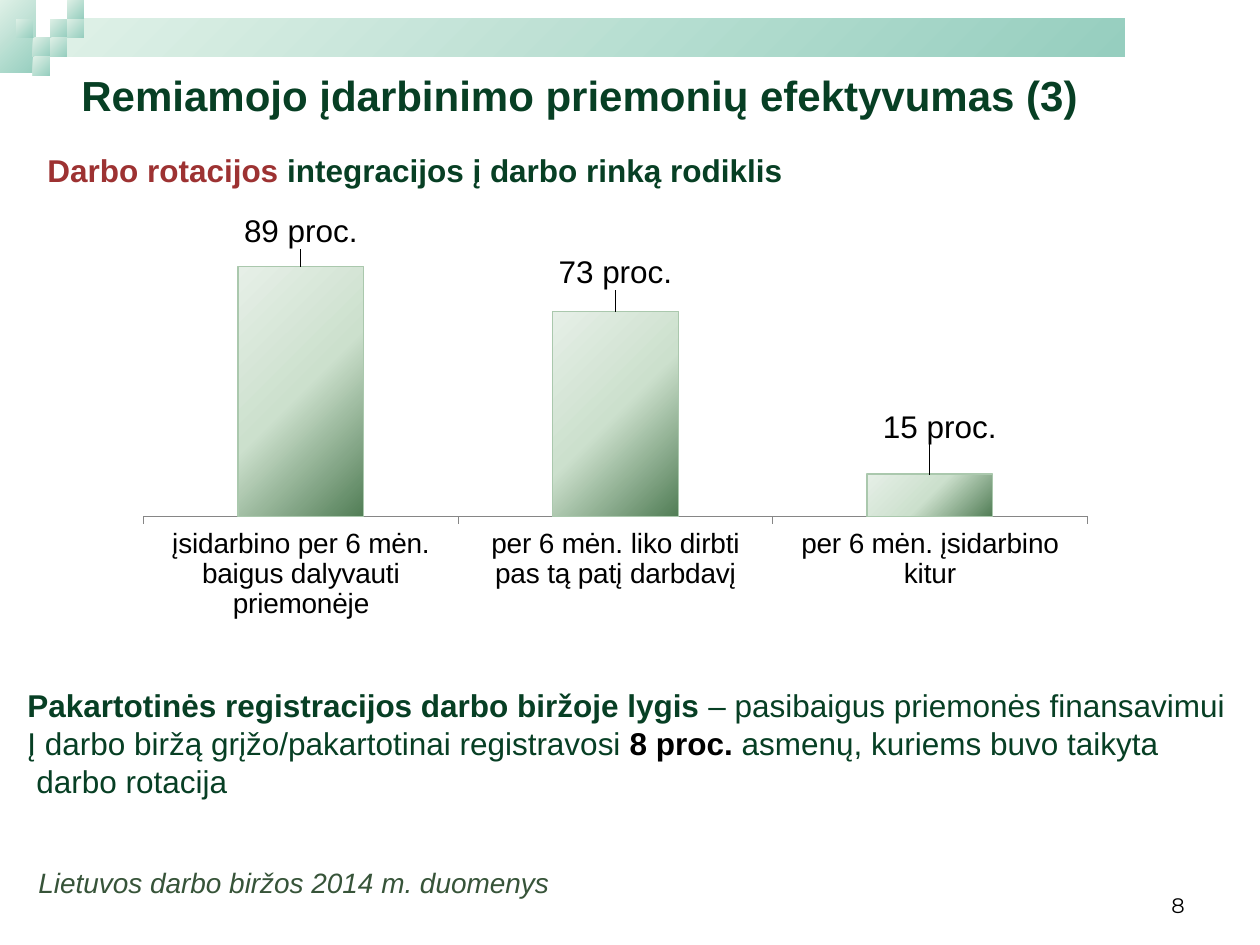
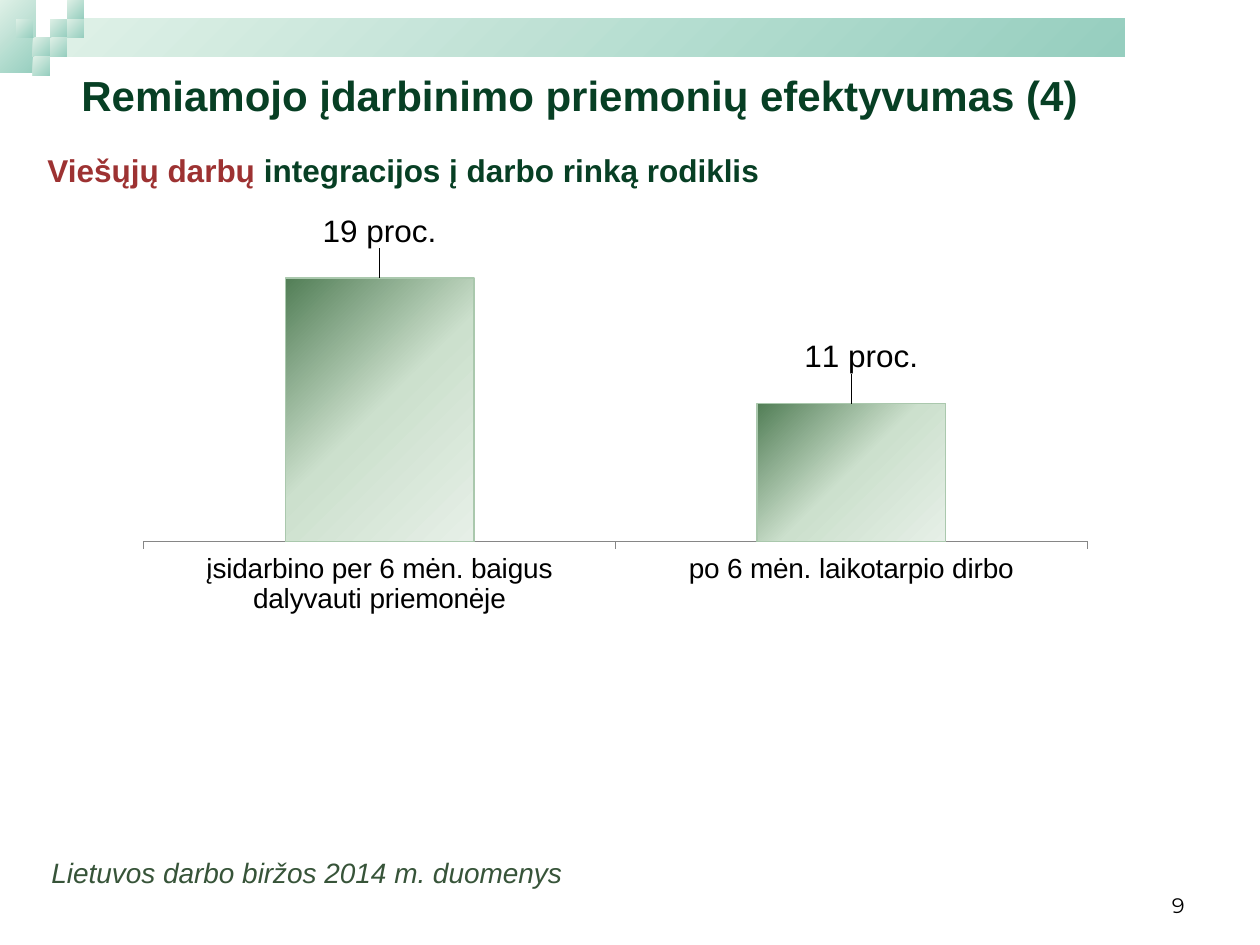
from lxml import etree
from pptx import Presentation
from pptx.chart.data import CategoryChartData
from pptx.dml.color import RGBColor
from pptx.enum.chart import XL_CHART_TYPE, XL_LABEL_POSITION, XL_TICK_MARK
from pptx.enum.shapes import MSO_SHAPE
from pptx.enum.text import MSO_ANCHOR, PP_ALIGN
from pptx.oxml.ns import qn
from pptx.util import Pt

RECTANGLE = MSO_SHAPE.RECTANGLE
COLUMNS = XL_CHART_TYPE.COLUMN_CLUSTERED
OUTSIDE_END = XL_LABEL_POSITION.OUTSIDE_END
TICK_OUTSIDE, TICK_NONE = XL_TICK_MARK.OUTSIDE, XL_TICK_MARK.NONE
TOP, MIDDLE, BOTTOM = MSO_ANCHOR.TOP, MSO_ANCHOR.MIDDLE, MSO_ANCHOR.BOTTOM
LEFT, RIGHT = PP_ALIGN.LEFT, PP_ALIGN.RIGHT

PX = 914400 / 126
COLORS = {
    "green": "073F24", "red": "9D3232", "black": "000000", "source": "375439",
    "band_light": "DFF1E7", "band_dark": "96CEBF",
    "bar_dark": "527E56", "bar_mid": "CCE0CD", "bar_light": "E6EFE7",
    "bar_line": "AAC8AD", "axis": "868686",
}
BAND_COLORS = ["band_light", "band_dark"]
BAR_COLORS = ["bar_dark", "bar_mid", "bar_light"]
SQUARE_CELLS = [(2, 1), (3, 0), (3, 1), (1, 2), (0, 1), (2, 2), (1, 3)]
BANDS = [(0, 0, 36, 73), (50, 19, 1075, 38)]
BANDS += [(16 + 17 * column, 19 * row, 17, 19) for column, row in SQUARE_CELLS]


def paint_gradient(fill, element, names):
    fill.gradient()
    fill.gradient_angle = 315
    stops = element.xpath(".//a:gsLst")[0]
    for stop in list(stops):
        stops.remove(stop)
    for number, name in enumerate(names):
        position = round(100000 * number / (len(names) - 1))
        stop = etree.SubElement(stops, qn("a:gs"), pos=str(position))
        etree.SubElement(stop, qn("a:srgbClr"), val=COLORS[name])


def set_layout(parent, index, settings):
    for layout in parent.findall(qn("c:layout")):
        parent.remove(layout)
    layout = etree.Element(qn("c:layout"))
    manual = etree.SubElement(layout, qn("c:manualLayout"))
    for tag, value in settings.items():
        etree.SubElement(manual, qn("c:" + tag), val=str(value))
    parent.insert(index, layout)


SLIDES = [
    {
        "number": "8",
        "title": "Remiamojo įdarbinimo priemonių efektyvumas (3)",
        "measure": "Darbo rotacijos ",
        "source_at": (26, 859, 640, 47),
        "summary": [
            [("Pakartotinės registracijos darbo biržoje lygis ", "green", True),
             ("– pasibaigus priemonės finansavimui", "green", False)],
            [("Į darbo biržą grįžo/pakartotinai registravosi ", "green", False),
             ("8 proc. ", "black", True),
             ("asmenų, kuriems buvo taikyta", "green", False)],
            [("darbo rotacija", "green", False)],
        ],
        "bars": [
            ("įsidarbino per 6 mėn. baigus dalyvauti priemonėje", 89, "89 proc.", 0, -0.03),
            ("per 6 mėn. liko dirbti pas tą patį darbdavį", 73, "73 proc.", 0, -0.04),
            ("per 6 mėn. įsidarbino kitur", 15, "15 proc.", 0.01, -0.06),
        ],
        "bar_colors": BAR_COLORS[::-1],
        "maximum": 100,
        "plot": (0.05, 0.69),
    },
    {
        "number": "9",
        "title": "Remiamojo įdarbinimo priemonių efektyvumas (4)",
        "measure": "Viešųjų darbų ",
        "source_at": (39, 849, 640, 47),
        "summary": [],
        "bars": [
            ("įsidarbino per 6 mėn. baigus dalyvauti priemonėje", 21, "19 proc.", 0, -0.06),
            ("po 6 mėn. laikotarpio dirbo", 11, "11 proc.", 0.01, -0.06),
        ],
        "bar_colors": BAR_COLORS,
        "maximum": 25,
        "plot": (0.02, 0.78),
    },
]

deck = Presentation()
deck.slide_width = round(1260 * PX)
deck.slide_height = round(945 * PX)

for content in SLIDES:
    page = deck.slides.add_slide(deck.slide_layouts[6])

    for band in BANDS:
        shape = page.shapes.add_shape(RECTANGLE, *[round(n * PX) for n in band])
        shape.shadow.inherit = False
        shape.line.fill.background()
        paint_gradient(shape.fill, shape._element, BAND_COLORS)

    chart_data = CategoryChartData()
    chart_data.categories = [bar[0] for bar in content["bars"]]
    chart_data.add_series("Series 1", [bar[1] for bar in content["bars"]])
    chart_area = [round(n * PX) for n in (124, 214, 983, 408)]
    chart = page.shapes.add_chart(COLUMNS, *chart_area, chart_data).chart
    chart.has_title = False
    chart.has_legend = False
    chart.font.name = "Arial"
    chart.font.size = Pt(18)
    chart.font.color.rgb = RGBColor.from_string(COLORS["black"])
    chart.value_axis.visible = False
    chart.value_axis.has_major_gridlines = False
    chart.value_axis.minimum_scale = 0
    chart.value_axis.maximum_scale = content["maximum"]
    chart.category_axis.major_tick_mark = TICK_OUTSIDE
    chart.category_axis.minor_tick_mark = TICK_NONE
    chart.category_axis.tick_labels.font.size = Pt(16)
    chart.category_axis.format.line.color.rgb = RGBColor.from_string(COLORS["axis"])
    chart.category_axis.format.line.width = Pt(0.75)
    plot_top, plot_height = content["plot"]
    set_layout(chart._chartSpace.xpath(".//c:plotArea")[0], 0, {
        "layoutTarget": "inner", "xMode": "edge", "yMode": "edge",
        "x": 0.02, "y": plot_top, "w": 0.96, "h": plot_height,
    })

    plot = chart.plots[0]
    plot.gap_width = 150
    plot.vary_by_categories = False
    series = plot.series[0]
    paint_gradient(series.format.fill, series._element, content["bar_colors"])
    series.format.line.color.rgb = RGBColor.from_string(COLORS["bar_line"])
    series.format.line.width = Pt(0.75)
    series.data_labels.show_value = True
    for index, (category, value, caption, shift_x, shift_y) in enumerate(content["bars"]):
        label = series.points[index].data_label
        label.text_frame.text = caption
        font = label.text_frame.paragraphs[0].runs[0].font
        font.name = "Arial"
        font.size = Pt(18)
        font.color.rgb = RGBColor.from_string(COLORS["black"])
        label.position = OUTSIDE_END
        label_element = series._element.xpath(".//c:dLbl")[index]
        set_layout(label_element, 1, {"x": shift_x, "y": shift_y})

    heading = [(content["measure"], "red", True),
               ("integracijos į darbo rinką rodiklis", "green", True)]
    source = [("Lietuvos darbo biržos 2014 m. duomenys", "source", False)]
    texts = [
        ((69, 55, 1063, 79), [[(content["title"], "green", True)]], 24, "Arial", MIDDLE, LEFT, False),
        ((35, 145, 900, 50), [heading], 18, "Arial", TOP, LEFT, False),
        ((15, 680, 1240, 127), content["summary"], 18, "Arial", TOP, LEFT, False),
        (content["source_at"], [source], 16, "Arial", TOP, LEFT, True),
        ((903, 861, 294, 63), [[(content["number"], "black", False)]], 12, "Montserrat", BOTTOM, RIGHT, False),
    ]
    for area, lines, size, font_name, anchor, alignment, italic in texts:
        if not lines:
            continue
        box = page.shapes.add_textbox(*[round(n * PX) for n in area])
        frame = box.text_frame
        frame.word_wrap = True
        frame.vertical_anchor = anchor
        for index, line in enumerate(lines):
            para = frame.add_paragraph() if index else frame.paragraphs[0]
            para.alignment = alignment
            if index == 2:
                para._p.get_or_add_pPr().set("marL", str(round(9 * PX)))
            para.font.name = font_name
            para.font.size = Pt(size)
            para.font.italic = italic
            for text, color, bold in line:
                span = para.add_run()
                span.text = text
                span.font.bold = bold
                span.font.color.rgb = RGBColor.from_string(COLORS[color])

deck.save("out.pptx")
